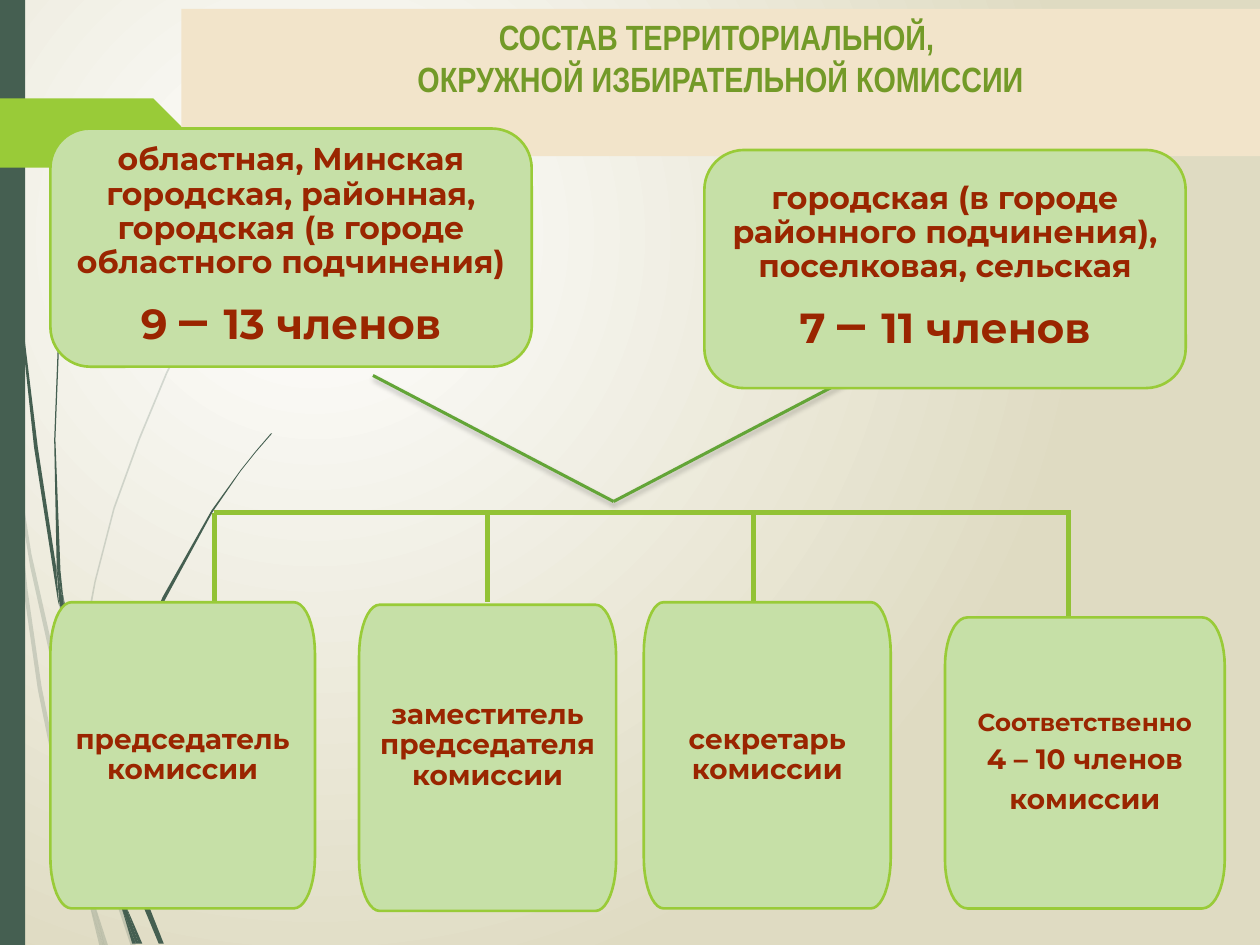
import math
from lxml import etree
from pptx import Presentation
from pptx import util as u
from pptx.dml.color import RGBColor
from pptx.enum import shapes, text
from pptx.oxml import parse_xml
from pptx.oxml.ns import qn

NS = 'xmlns:a="http://schemas.openxmlformats.org/drawingml/2006/main"'
WHITE = RGBColor(0xFF, 0xFF, 0xFF)
SAND = RGBColor(0xDF, 0xDB, 0xC2)
CREAM = RGBColor(0xF2, 0xE4, 0xCA)
PINE = RGBColor(0x45, 0x5F, 0x51)
LIME = RGBColor(0x99, 0xCB, 0x38)
PALE = RGBColor(0xC6, 0xE0, 0xA7)
STEM = RGBColor(0x92, 0xC2, 0x35)
LEAF = RGBColor(0x63, 0xA5, 0x37)
OLIVE = RGBColor(0x73, 0x9A, 0x28)
RUST = RGBColor(0x9A, 0x25, 0x00)

FAINT = [
    [(.08, 3.5), (.06, 3.22), (0, 2.82), (0, 2.99), (.07, 3.44)],
    [(.4, 5.22), (.59, 5.99), (.59, 5.86), (.43, 5.2), (.25, 4.4), (.1, 3.45),
     (.12, 3.76), (.24, 4.5)],
    [(.64, 6.07), (.61, 5.96), (.61, 6.1), (.85, 6.94), (1.04, 7.51),
     (1.08, 7.51), (.88, 6.92)],
    [(.83, 7.51), (.86, 7.51), (.73, 7.11)],
    [(.64, 6.83), (.48, 6.19), (.33, 5.45), (.22, 4.69), (.12, 3.76), (.08, 3.5),
     (.19, 4.7), (.3, 5.47), (.45, 6.21), (.64, 6.93), (.7, 7.14), (.69, 7.07)],
    [(.58, 5.99), (.6, 6.46), (.64, 6.83), (.67, 6.92), (.73, 7.11), (.72, 7.06),
     (.63, 6.46), (.61, 6.1), (.61, 6.08)],
    [(.61, 5.84), (.65, 5.23), (.76, 4.62), (.91, 4.04), (1.11, 3.49), (1.33, 2.96),
     (1.59, 2.45), (1.87, 1.98), (2.01, 1.75), (2.17, 1.54), (2.17, 1.53),
     (2.01, 1.75), (1.86, 1.97), (1.58, 2.44), (1.32, 2.95), (1.1, 3.48),
     (.9, 4.03), (.75, 4.61), (.63, 5.22), (.59, 5.84), (.59, 5.86), (.61, 5.96)],
    [(.7, 7.14), (.79, 7.51), (.82, 7.51)],
    [(.61, 6.08), (.61, 6.1), (.61, 5.96), (.59, 5.86), (.58, 5.99)],
    [(.67, 6.92), (.65, 6.83), (.69, 7.07), (.7, 7.14), (.82, 7.51), (.83, 7.51),
     (.73, 7.11)],
]
DARK = [
    [(.05, 1.1), (.14, 2.33), (.27, 3.55), (.46, 4.77), (.47, 4.81), (.45, 4.57),
     (.45, 4.53), (.3, 3.55), (.15, 2.32), (.06, 1.09), (.04, .48), (.03, 0),
     (.02, 0), (.03, .48)],
    [(.73, 5.92), (.88, 6.45), (.88, 6.31), (.77, 5.9), (.62, 5.32), (.5, 4.72),
     (.53, 5.05), (.62, 5.49)],
    [(.94, 6.49), (.91, 6.41), (.91, 6.56), (1.09, 7.08), (1.26, 7.49), (1.3, 7.49),
     (1.13, 7.06)],
    [(.91, 6.91), (.81, 6.57), (.69, 6.07), (.6, 5.56), (.53, 5.05), (.47, 4.77),
     (.56, 5.57), (.65, 6.08), (.77, 6.59), (.92, 7.08), (.97, 7.22), (.96, 7.17)],
    [(.5, 4.72), (.48, 4.53), (.44, 3.49), (.48, 2.45), (.52, 1.93), (.58, 1.41),
     (.51, 1.93), (.47, 2.45), (.43, 3.49), (.45, 4.49), (.49, 4.72)],
    [(1.1, 7.49), (1.13, 7.49), (1, 7.19)],
    [(.47, 4.77), (.53, 5.05), (.5, 4.72), (.49, 4.72), (.45, 4.49), (.45, 4.53)],
    [(.91, 6.33), (.94, 5.92), (1.03, 5.52), (1.15, 5.13), (1.31, 4.76), (1.69, 4.06),
     (1.91, 3.74), (2.03, 3.59), (2.16, 3.44), (2.15, 3.44), (2.03, 3.58),
     (1.91, 3.73), (1.68, 4.05), (1.29, 4.74), (1.13, 5.12), (1.01, 5.51),
     (.92, 5.91), (.88, 6.31), (.91, 6.41)],
    [(.97, 7.22), (1.05, 7.49), (1.08, 7.49)],
    [(.88, 6.45), (.91, 6.91), (.96, 7.06), (1, 7.19), (1, 7.16), (.91, 6.56),
     (.9, 6.51)],
    [(.88, 6.45), (.9, 6.51), (.91, 6.56), (.91, 6.41), (.88, 6.31)],
    [(.96, 7.06), (.91, 6.91), (.96, 7.17), (.97, 7.22), (1.08, 7.49), (1.1, 7.49),
     (1, 7.19)],
]
TOPS = [
    (.4, 1.02, "областная, Минская городская, районная, городская (в городе "
     "областного подчинения)", "9 ", "13 членов"),
    (5.59, 1.19, "городская (в городе районного подчинения), поселковая, сельская",
     "7 ", "11 членов"),
]
ROLES = [
    (.4, 4.78, 2.1, 2.43, .05, [[("председатель комиссии", 16)]]),
    (2.85, 4.8, 2.04, 2.43, .24, [[("заместитель председателя комиссии", 16)]]),
    (5.11, 4.78, 1.96, 2.43, .05, [[("секретарь комиссии", 16)]]),
    (7.5, 4.9, 2.22, 2.31, .05, [[("Соответственно", 14)],
                               [("4 – 10 членов", 16)], [("комиссии", 16)]]),
]


def paint(shape, fill, line=None):
    shape.shadow.inherit = False
    shape.fill.solid()
    shape.fill.fore_color.rgb = fill
    if line is None:
        shape.line.fill.background()
    else:
        shape.line.color.rgb = line
        shape.line.width = u.Pt(1.5)


def shade(slide):
    fill = slide.background.fill
    fill.gradient()
    for stop, tone in zip(fill.gradient_stops, (WHITE, SAND)):
        stop.color.rgb = tone
    grad = slide.background.element.find(".//" + qn("a:gradFill"))
    grad.replace(grad.find(qn("a:lin")), parse_xml(
        f'<a:path {NS} path="circle"><a:fillToRect l="50000" t="50000" '
        'r="100000" b="100000"/></a:path>'))


def preset(slide, kind, x, y, w, h, fill, line=None):
    shape = slide.shapes.add_shape(kind, *map(u.Inches, (x, y, w, h)))
    paint(shape, fill, line)
    return shape


def outline(slide, points, fill, line=None):
    dots = [(u.Inches(x), u.Inches(y)) for x, y in points]
    form = slide.shapes.build_freeform(*dots[0])
    form.add_line_segments(dots[1:], close=True)
    shape = form.convert_to_shape()
    paint(shape, fill, line)
    return shape


def fade(shape):
    tone = shape.element.spPr.find(qn("a:solidFill"))[0]
    etree.SubElement(tone, qn("a:alpha"), val="20000")


def barrel(slide, x, y, w, h):
    rx, ry = .08 * w, h / 6
    points = []
    for turn, cx, cy in ((180, x + rx, y + ry), (270, x + w - rx, y + ry),
                         (0, x + w - rx, y + h - ry), (90, x + rx, y + h - ry)):
        for step in range(0, 91, 9):
            ang = math.radians(turn + step)
            points.append((cx + rx * math.cos(ang), cy + ry * math.sin(ang)))
    return outline(slide, points, PALE, LIME)


def link(slide, x1, y1, x2, y2, tone, width, glow=False):
    line = slide.shapes.add_connector(shapes.MSO_CONNECTOR.STRAIGHT,
                                      *map(u.Inches, (x1, y1, x2, y2)))
    line.line.color.rgb = tone
    line.line.width = u.Pt(width)
    drop = ('<a:outerShdw blurRad="38100" dist="25400" dir="5400000"><a:srgbClr '
            'val="000000"><a:alpha val="25000"/></a:srgbClr></a:outerShdw>') if glow else ""
    line.element.spPr.append(parse_xml(f'<a:effectLst {NS}>{drop}</a:effectLst>'))


def write(shape, paras, inset, low):
    frame = shape.text_frame
    frame.word_wrap = True
    frame.vertical_anchor = text.MSO_ANCHOR.MIDDLE
    frame.margin_left = frame.margin_right = frame.margin_top = u.Inches(inset)
    frame.margin_bottom = u.Inches(low)
    for i, runs in enumerate(paras):
        para = frame.add_paragraph() if i else frame.paragraphs[0]
        para.alignment = text.PP_ALIGN.CENTER
        para.line_spacing = .9
        para.space_after = u.Pt(.35 * runs[0][1])
        for words, size in runs:
            run = para.add_run()
            run.text = words
            style(run.font, "Montserrat", size, RUST)


def style(font, name, size, tone):
    font.name, font.size, font.bold = name, u.Pt(size), True
    font.color.rgb = tone


def head(slide):
    title = slide.shapes.title
    title.left, title.top, title.width, title.height = map(
        u.Inches, (1.44, .07, 8.56, 1.17))
    title.fill.solid()
    title.fill.fore_color.rgb = CREAM
    frame = title.text_frame
    frame.text = "СОСТАВ ТЕРРИТОРИАЛЬНОЙ, \vОКРУЖНОЙ ИЗБИРАТЕЛЬНОЙ КОМИССИИ"
    frame.vertical_anchor = text.MSO_ANCHOR.TOP
    frame.paragraphs[0].alignment = text.PP_ALIGN.CENTER
    for run in frame.paragraphs[0].runs:
        style(run.font, "Arial Narrow", 20, OLIVE)
    title.element.getparent().append(title.element)


def main():
    deck = Presentation()
    deck.slide_width, deck.slide_height = u.Inches(10), u.Inches(7.5)
    slide = deck.slides.add_slide(deck.slide_layouts[5])
    shade(slide)
    for points in FAINT:
        fade(outline(slide, points, PINE))
    for points in DARK:
        outline(slide, points, PINE)
    kind = shapes.MSO_SHAPE
    preset(slide, kind.RECTANGLE, 0, 0, .2, 7.5, PINE)
    preset(slide, kind.PENTAGON, 0, .78, 1.49, .55, LIME)
    link(slide, 1.7, 4.07, 8.5, 4.07, STEM, 3)
    for x, y in ((1.7, 4.78), (3.87, 4.78), (5.98, 4.78), (8.48, 4.9)):
        link(slide, x, 4.07, x, y, STEM, 3)
    for x in (2.96, 6.78):
        link(slide, x, 2.98, 4.87, 3.98, LEAF, 1.75, True)
    head(slide)
    for x, y, names, low, high in TOPS:
        box = preset(slide, kind.ROUNDED_RECTANGLE, x, y, 3.82, 1.89, PALE, LIME)
        write(box, [[(names, 18)], [(low, 24), ("– ", 32), (high, 24)]], .06, .06)
    for x, y, w, h, low, paras in ROLES:
        write(barrel(slide, x, y, w, h), paras, .05, low)
    deck.save("out.pptx")


if __name__ == "__main__":
    main()
